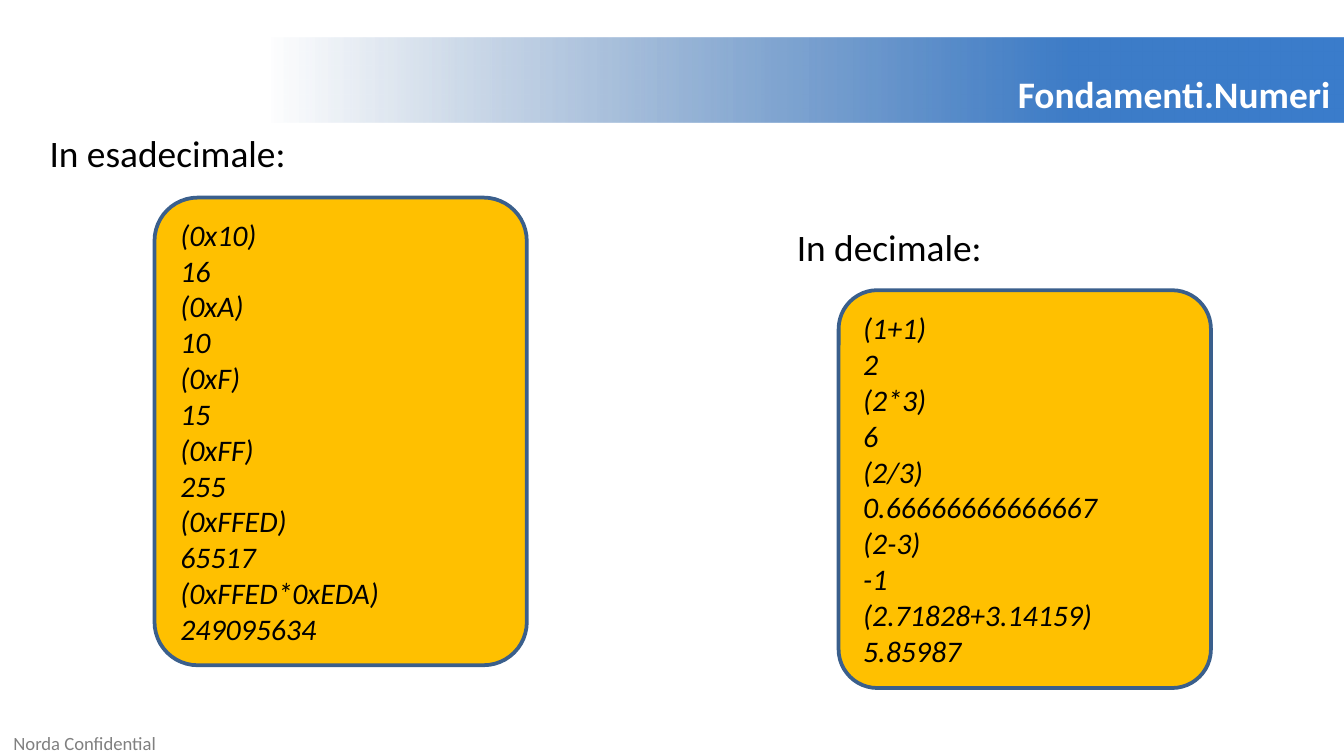
from pptx import Presentation
from pptx.dml.color import RGBColor
from pptx.enum.shapes import MSO_SHAPE as SHAPE
from pptx.enum.text import MSO_ANCHOR as ANCHOR, MSO_AUTO_SIZE as AUTO_SIZE, PP_ALIGN as ALIGN
from pptx.oxml import parse_xml
from pptx.oxml.ns import nsdecls
from pptx.util import Inches, Pt

TITLE = "Fondamenti.Numeri"
FOOTER = "Norda Confidential"
EXAMPLES = [
    {
        "heading": "In decimale:",
        "heading_at": (5.83, 1.62),
        "panel_at": (6.24, 2.16),
        "panel_height": 2.96,
        "rounding": 0.104,
        "lines": ["(1+1)", "2", "(2*3)", "6", "(2/3)", "0.66666666666667",
                  "(2-3)", "-1", "(2.71828+3.14159)", "5.85987"],
    },
    {
        "heading": "In esadecimale:",
        "heading_at": (0.27, 0.92),
        "panel_at": (1.15, 1.47),
        "panel_height": 3.48,
        "rounding": 0.116,
        "lines": ["(0x10)", "16", "(0xA)", "10", "(0xF)", "15", "(0xFF)", "255",
                  "(0xFFED)", "65517", "(0xFFED*0xEDA)", "249095634"],
    },
]

THEME = {
    "font": "Calibri",
    "heading_size": 20, "code_size": 16, "footer_size": 10,
    "text": "000000", "title": "FFFFFF", "footer": "808080",
    "panel": "FFC000", "panel_line": "3A5F8C",
    # position %, colour, opacity %
    "banner": [(20, "2F5F99", 0), (80, "3D7CC7", 100), (100, "3A7CCB", 100)],
}
SLIDE_WIDTH = Inches(10)
SLIDE_HEIGHT = SLIDE_WIDTH * 9 // 16
HEADING_SIZE = (2.92, 0.44)
PANEL_WIDTH = 2.77


def write(frame, lines, size, color, align, bold=False, italic=False):
    frame.word_wrap = True
    frame.text = "\n".join(lines)
    for paragraph in frame.paragraphs:
        paragraph.alignment = align
        for run in paragraph.runs:
            font = run.font
            font.name, font.size = THEME["font"], Pt(size)
            font.bold, font.italic = bold, italic
            font.color.rgb = RGBColor.from_string(color)


def fill_banner(shape):
    """Fade the banner from transparent on the left to blue on the right."""
    stops = "".join(
        f'<a:gs pos="{position * 1000}"><a:srgbClr val="{color}">'
        f'<a:alpha val="{opacity * 1000}"/></a:srgbClr></a:gs>'
        for position, color, opacity in THEME["banner"])
    shape._element.spPr.append(parse_xml(
        f'<a:gradFill {nsdecls("a")} rotWithShape="1"><a:gsLst>{stops}</a:gsLst>'
        '<a:lin ang="0" scaled="1"/></a:gradFill>'))


def add_title(slide):
    title = slide.shapes.title
    title.left, title.top, title.width, title.height = map(Inches, (0, 0.28, 10, 0.63))
    fill_banner(title)
    frame = title.text_frame
    frame.auto_size = AUTO_SIZE.NONE
    frame.vertical_anchor = ANCHOR.BOTTOM
    write(frame, [TITLE], THEME["heading_size"], THEME["title"], ALIGN.RIGHT, bold=True)


def add_footer(slide):
    footer = slide.shapes.add_textbox(*map(Inches, (0.1, 5.43, 1.81, 0.2)))
    frame = footer.text_frame
    frame.margin_left = frame.margin_right = frame.margin_top = frame.margin_bottom = 0
    frame.vertical_anchor = ANCHOR.MIDDLE
    write(frame, [FOOTER], THEME["footer_size"], THEME["footer"], ALIGN.LEFT)


def add_example(slide, example):
    heading = slide.shapes.add_textbox(*map(Inches, example["heading_at"] + HEADING_SIZE))
    heading.text_frame.auto_size = AUTO_SIZE.SHAPE_TO_FIT_TEXT
    write(heading.text_frame, [example["heading"]],
          THEME["heading_size"], THEME["text"], ALIGN.JUSTIFY)

    panel = slide.shapes.add_shape(
        SHAPE.ROUNDED_RECTANGLE,
        *map(Inches, example["panel_at"] + (PANEL_WIDTH, example["panel_height"])))
    panel.adjustments[0] = example["rounding"]
    panel.shadow.inherit = False
    panel.fill.solid()
    panel.fill.fore_color.rgb = RGBColor.from_string(THEME["panel"])
    panel.line.color.rgb = RGBColor.from_string(THEME["panel_line"])
    panel.line.width = Pt(2)
    panel.text_frame.vertical_anchor = ANCHOR.MIDDLE
    write(panel.text_frame, example["lines"],
          THEME["code_size"], THEME["text"], ALIGN.JUSTIFY, italic=True)


def main():
    deck = Presentation()
    deck.slide_width, deck.slide_height = SLIDE_WIDTH, SLIDE_HEIGHT
    title_only = deck.slide_layouts[5]
    slide = deck.slides.add_slide(title_only)
    add_title(slide)
    add_footer(slide)
    for example in EXAMPLES:
        add_example(slide, example)
    deck.save("out.pptx")


if __name__ == "__main__":
    main()
